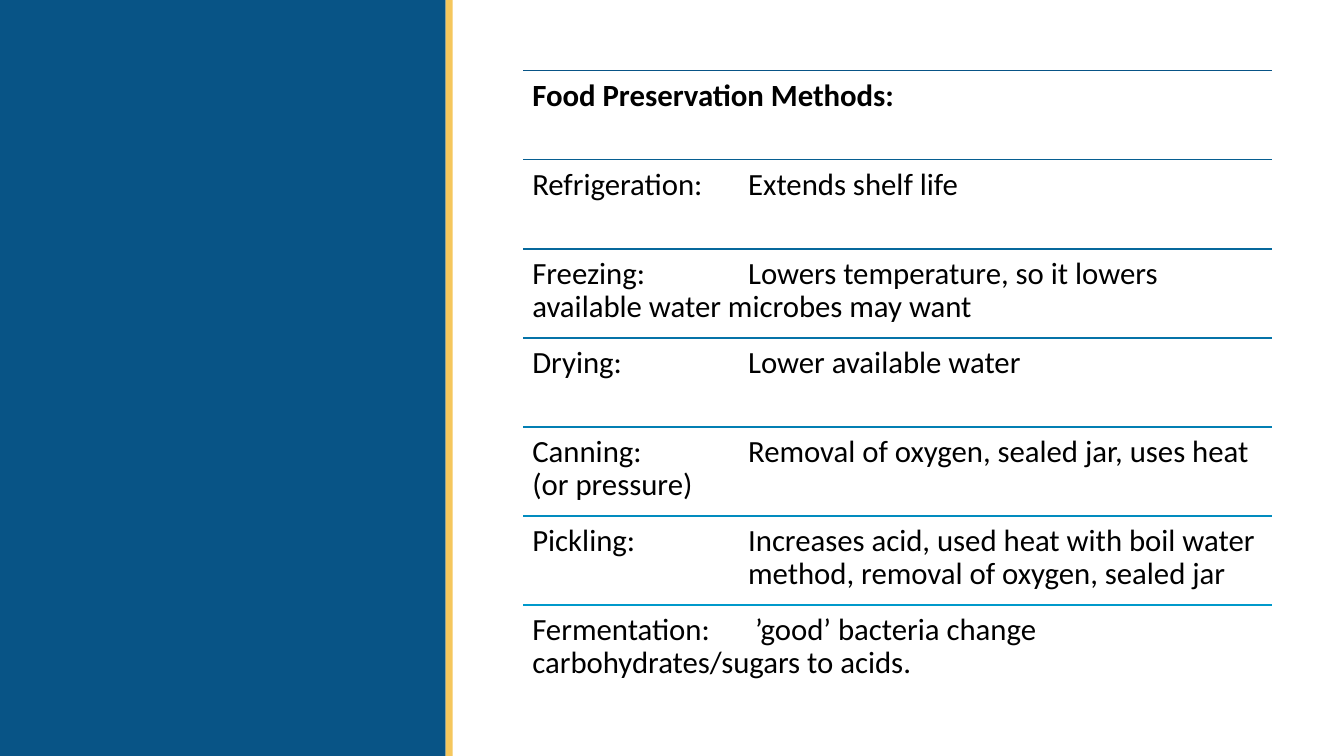
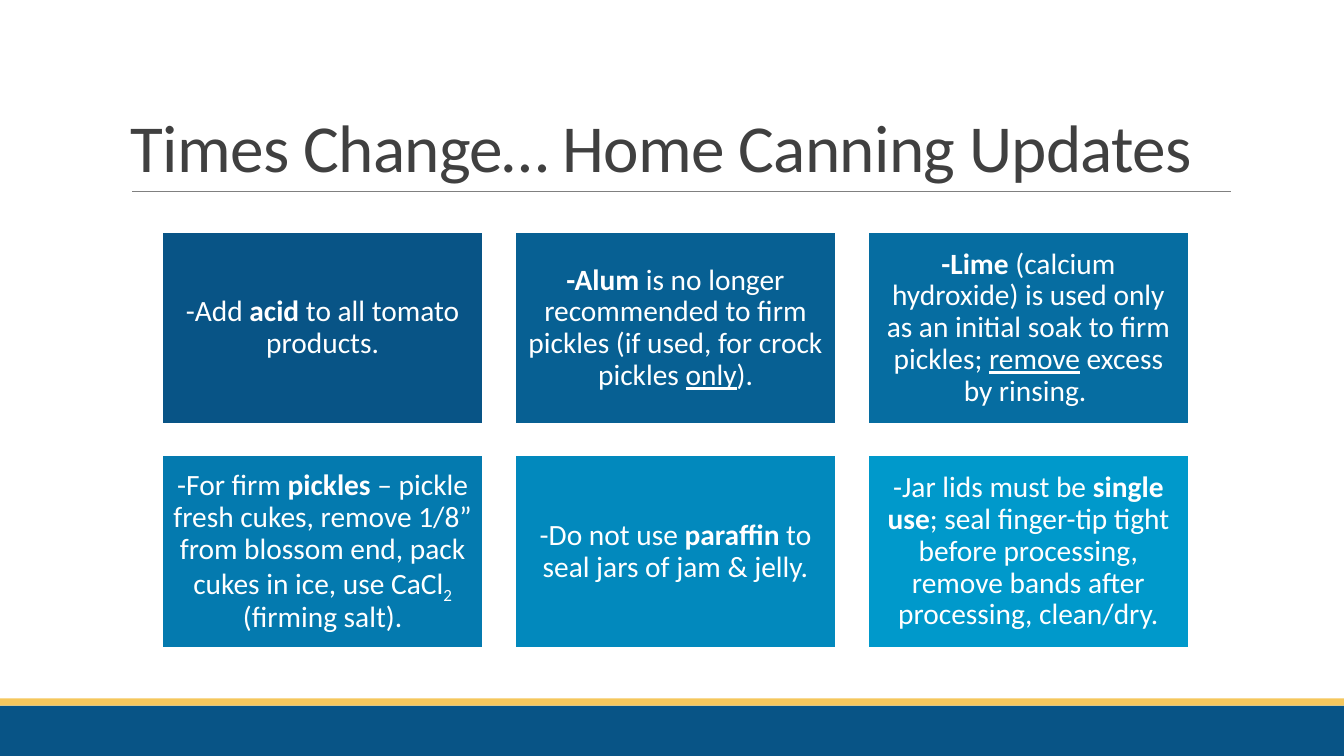
"""Build two slides on food preservation methods and home canning updates."""
from typing import NamedTuple, Optional

from lxml import etree
from pptx import Presentation, util as u
from pptx.dml.color import RGBColor
from pptx.enum import shapes, text
from pptx.oxml.ns import qn

FONT = "Calibri"
WIDTH, HEIGHT = 13.33, 7.5
NAVY = RGBColor(0x08, 0x54, 0x86)
GOLD = RGBColor(0xF5, 0xC7, 0x5D)
SKY = RGBColor(0x00, 0x99, 0xCB)
WHITE = RGBColor(0xFF, 0xFF, 0xFF)
BLACK = RGBColor(0x00, 0x00, 0x00)
GRAY = RGBColor(0x80, 0x80, 0x80)
CHARCOAL = RGBColor(0x40, 0x40, 0x40)

STRIPE = 0.07
INSET = 0.09
SIDEBAR = 4.42
FOOTER_TOP = 7.0
LIST_LEFT, LIST_TOP, LIST_WIDTH, ROW_HEIGHT = 5.19, 0.7, 7.43, 5.3 / 6
TAB_STOP = 2.14
CARD_LEFT, CARD_TOP, CARD_WIDTH, CARD_HEIGHT = 1.61, 2.3, 3.18, 1.91
COLUMN_STEP, ROW_STEP, CARD_COLUMNS = 3.5, 2.22, 3


class Box(NamedTuple):
    """Left, top, width and height in inches."""
    left: float
    top: float
    width: float
    height: float


class Span(NamedTuple):
    """A stretch of text with its emphasis."""
    text: str
    bold: bool = False
    underline: bool = False
    subscript: bool = False


class Method(NamedTuple):
    """A row of the methods list and the colour of its rule."""
    text: str
    color: RGBColor
    bold: bool = False


class Card(NamedTuple):
    """A filled card and its spans."""
    color: RGBColor
    spans: tuple[Span, ...]


METHODS = (
    Method("Food Preservation Methods:", NAVY, True),
    Method("Refrigeration:\tExtends shelf life", RGBColor(0x07, 0x5E, 0x91)),
    Method("Freezing:\tLowers temperature, so it lowers\vavailable water microbes may want",
           RGBColor(0x06, 0x68, 0x9C)),
    Method("Drying:\tLower available water", RGBColor(0x05, 0x73, 0xA8)),
    Method("Canning:\tRemoval of oxygen, sealed jar, uses heat\v(or pressure)",
           RGBColor(0x03, 0x7F, 0xB3)),
    Method("Pickling:\tIncreases acid, used heat with boil water\v"
           "\tmethod, removal of oxygen, sealed jar", RGBColor(0x02, 0x8C, 0xBF)),
    Method("Fermentation:\t ’good’ bacteria change\vcarbohydrates/sugars to acids.", SKY),
)

CARDS = (
    Card(NAVY, (Span("-Add "), Span("acid ", bold=True), Span("to all tomato products."))),
    Card(RGBColor(0x07, 0x60, 0x93), (
        Span("-Alum", bold=True),
        Span(" is no longer recommended to firm pickles (if used, for crock pickles "),
        Span("only", underline=True), Span(")."))),
    Card(RGBColor(0x06, 0x6D, 0xA1), (
        Span("-Lime", bold=True),
        Span(" (calcium hydroxide) is used only as an initial soak to firm pickles; "),
        Span("remove", underline=True), Span(" excess by rinsing. "))),
    Card(RGBColor(0x04, 0x7A, 0xAF), (
        Span("-For firm "), Span("pickles", bold=True),
        Span(" – pickle fresh cukes, remove 1/8” from blossom end, pack cukes in ice, use CaCl"),
        Span("2 ", subscript=True), Span("(firming salt)."))),
    Card(RGBColor(0x02, 0x89, 0xBD), (
        Span("-Do not use "), Span("paraffin", bold=True),
        Span(" to seal jars of jam & jelly."))),
    Card(SKY, (
        Span("-Jar lids must be "), Span("single use", bold=True),
        Span("; seal finger-tip tight before processing, remove bands after processing, "
             "clean/dry."))),
)


def add_rect(s, box: Box, fill: RGBColor, line: Optional[RGBColor] = None):
    """Draw a flat rectangle, outlined if a line colour is given."""
    sp = s.shapes.add_shape(shapes.MSO_SHAPE.RECTANGLE, *map(u.Inches, box))
    sp.shadow.inherit = False
    sp.fill.solid()
    sp.fill.fore_color.rgb = fill
    if line is None:
        sp.line.fill.background()
    else:
        sp.line.color.rgb = line
        sp.line.width = u.Pt(1.25)
    return sp


def add_rule(s, left: float, top: float, width: float, color: RGBColor, weight: float) -> None:
    """Draw a horizontal rule without a shadow."""
    ends = map(u.Inches, (left, top, left + width, top))
    line = s.shapes.add_connector(shapes.MSO_CONNECTOR.STRAIGHT, *ends)
    line.line.color.rgb = color
    line.line.width = u.Pt(weight)
    etree.SubElement(line._element.spPr, qn("a:effectLst"))


def set_frame(tf, anchor, inset: Optional[float] = None) -> None:
    """Wrap and anchor a text frame, with equal insets if given."""
    tf.word_wrap = True
    tf.vertical_anchor = anchor
    if inset is not None:
        tf.margin_left = tf.margin_right = tf.margin_top = tf.margin_bottom = u.Inches(inset)


def style_run(r, size: float, color: RGBColor, bold: bool = False) -> None:
    """Set the font of a run."""
    r.font.name = FONT
    r.font.size = u.Pt(size)
    r.font.color.rgb = color
    r.font.bold = bold


def add_text(s, box: Box, content: str, size: float, color: RGBColor, anchor,
             spacing: float, bold: bool = False, inset: Optional[float] = None,
             tab: Optional[float] = None):
    """Add a one-paragraph text box and return its paragraph."""
    tf = s.shapes.add_textbox(*map(u.Inches, box)).text_frame
    set_frame(tf, anchor, inset)
    p = tf.paragraphs[0]
    p.text = content
    if tab is not None:
        tabs = etree.SubElement(p._p.get_or_add_pPr(), qn("a:tabLst"))
        etree.SubElement(tabs, qn("a:tab"), pos=str(u.Inches(tab)), algn="l")
    p.line_spacing = spacing
    for r in p.runs:
        style_run(r, size, color, bold)
    return p


def add_title(s, content: str) -> None:
    """Add the slide title and the rule below it."""
    add_rule(s, 1.31, 1.9, 10.9, GRAY, 0.5)
    p = add_text(s, Box(1.2, 0.31, 11, 1.59), content, 48, CHARCOAL,
                 text.MSO_ANCHOR.BOTTOM, 0.85)
    for r in p.runs:
        r._r.get_or_add_rPr().set("spc", "-50")


def add_sidebar(s) -> None:
    """Draw the left band with its gold stripe."""
    add_rect(s, Box(0, 0, SIDEBAR, HEIGHT), NAVY)
    add_rect(s, Box(SIDEBAR, 0, STRIPE, HEIGHT), GOLD)


def add_footer(s) -> None:
    """Draw the bottom band with its gold stripe."""
    add_rect(s, Box(0, FOOTER_TOP, WIDTH, HEIGHT - FOOTER_TOP), NAVY)
    add_rect(s, Box(0, FOOTER_TOP - STRIPE, WIDTH, STRIPE), GOLD)


def add_method(s, row: int, method: Method) -> None:
    """Draw one ruled row of the methods list."""
    top = LIST_TOP + row * ROW_HEIGHT
    add_rule(s, LIST_LEFT, top, LIST_WIDTH, method.color, 1.25)
    add_text(s, Box(LIST_LEFT, top, LIST_WIDTH, ROW_HEIGHT), method.text, 22, BLACK,
             text.MSO_ANCHOR.TOP, 0.9, method.bold, INSET, TAB_STOP)


def add_card(s, index: int, card: Card) -> None:
    """Draw one card at its place in the grid."""
    row, column = divmod(index, CARD_COLUMNS)
    box = Box(CARD_LEFT + column * COLUMN_STEP, CARD_TOP + row * ROW_STEP,
              CARD_WIDTH, CARD_HEIGHT)
    tf = add_rect(s, box, card.color, WHITE).text_frame
    set_frame(tf, text.MSO_ANCHOR.MIDDLE, INSET)
    p = tf.paragraphs[0]
    p.alignment = text.PP_ALIGN.CENTER
    p.line_spacing = 0.9
    for span in card.spans:
        r = p.add_run()
        r.text = span.text
        style_run(r, 21, WHITE, span.bold)
        r.font.underline = span.underline
        if span.subscript:
            r._r.get_or_add_rPr().set("baseline", "-25000")


def main() -> None:
    """Build and save the presentation."""
    prs = Presentation()
    prs.slide_width, prs.slide_height = u.Inches(WIDTH), u.Inches(HEIGHT)
    blank = prs.slide_layouts[6]

    s = prs.slides.add_slide(blank)
    add_sidebar(s)
    for row, method in enumerate(METHODS):
        add_method(s, row, method)

    s = prs.slides.add_slide(blank)
    add_footer(s)
    add_title(s, "Times Change… Home Canning Updates")
    for index, card in enumerate(CARDS):
        add_card(s, index, card)

    prs.save("out.pptx")


if __name__ == "__main__":
    main()
